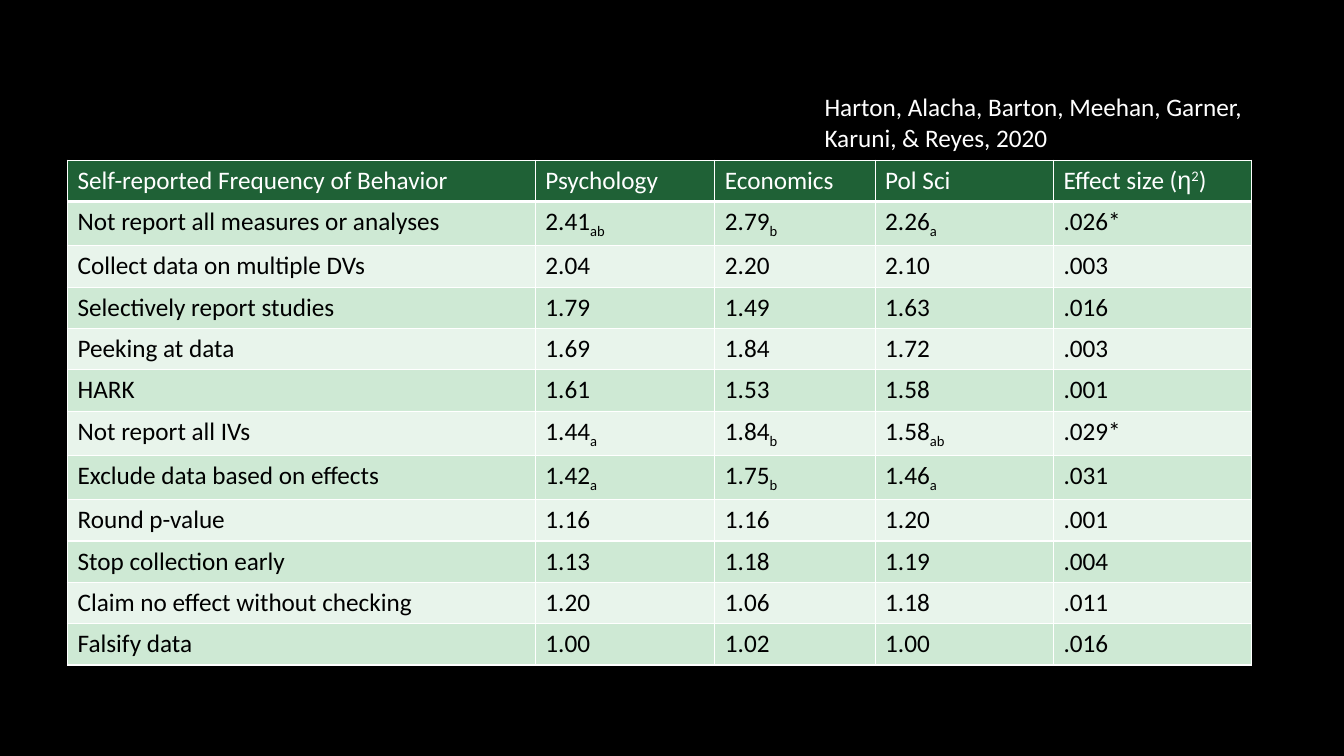
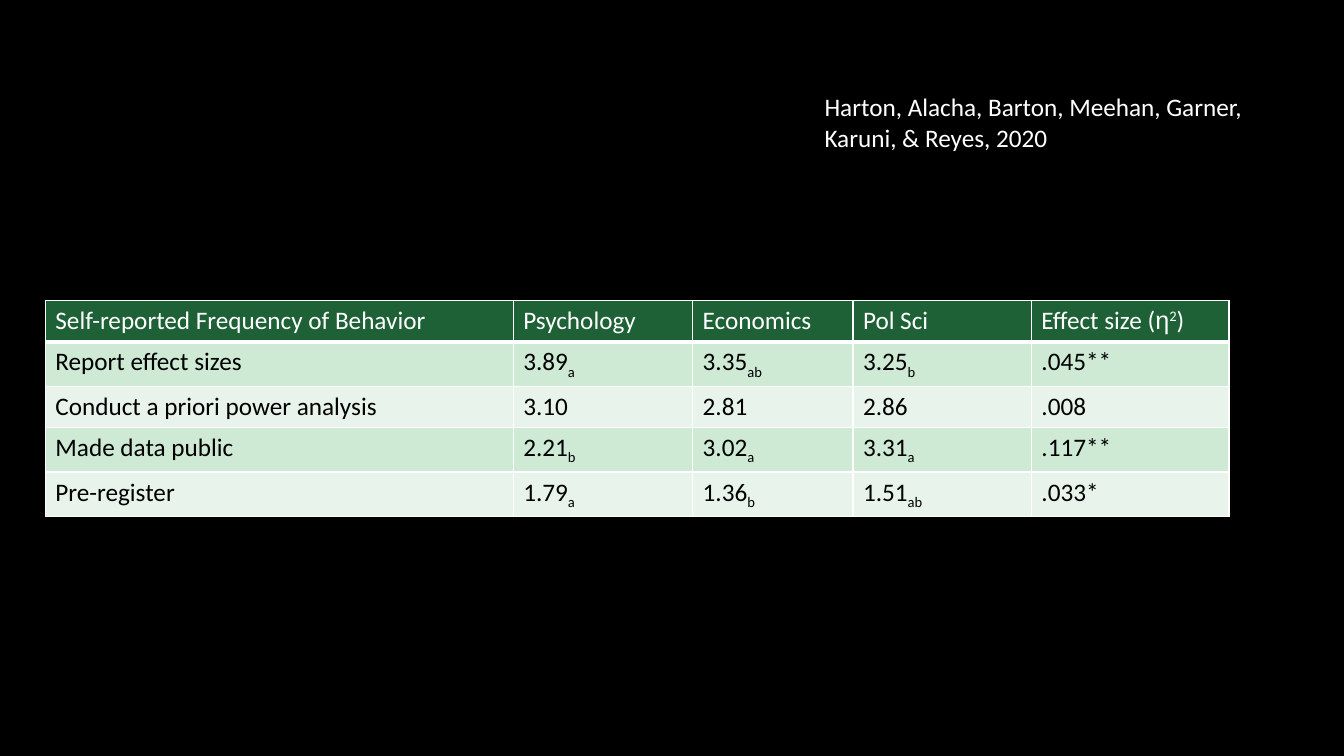
from dataclasses import dataclass

from lxml.etree import SubElement
from pptx import Presentation
from pptx.dml.color import RGBColor
from pptx.enum.text import MSO_AUTO_SIZE
from pptx.oxml.ns import qn
from pptx.util import Inches, Pt

WHITE, BLACK, GREEN = "FFFFFF", "000000", "1F6136"
BANDS = ("CEE9D4", "E8F4EB")
FONT = {"name": "Calibri", "size": Pt(18), "bold": False}
WIDTHS = (4.64, 1.78, 1.59, 1.77, 1.96)
ROW = 0.41
SOURCE = "Harton, Alacha, Barton, Meehan, Garner, Karuni, & Reyes, 2020"
HEAD = "Self-reported Frequency of Behavior|Psychology|Economics|Pol Sci|Effect size (η^2^)"


@dataclass
class Study:
    left: float
    top: float
    rows: tuple[str, ...]


# In a row, | parts the cells, _x_ lowers x and ^x^ raises it.
STUDIES = (
    Study(0.67, 1.59, (
        "Not report all measures or analyses|2.41_ab_|2.79_b_|2.26_a_|.026*",
        "Collect data on multiple DVs|2.04|2.20|2.10|.003",
        "Selectively report studies|1.79|1.49|1.63|.016",
        "Peeking at data|1.69|1.84|1.72|.003",
        "HARK|1.61|1.53|1.58|.001",
        "Not report all IVs|1.44_a_|1.84_b_|1.58_ab_|.029*",
        "Exclude data based on effects|1.42_a_|1.75_b_|1.46_a_|.031",
        "Round p-value|1.16|1.16|1.20|.001",
        "Stop collection early|1.13|1.18|1.19|.004",
        "Claim no effect without checking|1.20|1.06|1.18|.011",
        "Falsify data|1.00|1.02|1.00|.016",
    )),
    Study(0.45, 2.98, (
        "Report effect sizes|3.89_a_|3.35_ab_|3.25_b_|.045**",
        "Conduct a priori power analysis|3.10|2.81|2.86|.008",
        "Made data public|2.21_b_|3.02_a_|3.31_a_|.117**",
        "Pre-register|1.79_a_|1.36_b_|1.51_ab_|.033*",
    )),
)


def paint(fill, color: str) -> None:
    fill.solid()
    fill.fore_color.rgb = RGBColor.from_string(color)


def add_run(para, text: str, color: str, shift: int = 0, face: str = "Calibri") -> None:
    """Add a run, raised or lowered by shift percent."""
    run = para.add_run()
    run.text = text
    for key, value in (FONT | {"name": face}).items():
        setattr(run.font, key, value)
    paint(run.font.fill, color)
    if shift:
        run.font._element.set("baseline", str(shift * 1000))


def write(para, text: str, color: str) -> None:
    """Write text, turning its marks into raised and lowered runs."""
    mark, shift = ("^", 30) if "^" in text else ("_", -25)
    for i, part in enumerate(text.split(mark)):
        stem = part.removesuffix("η")
        if stem:
            add_run(para, stem, color, shift if i % 2 else 0)
        if stem != part:
            add_run(para, "η", color, face="Arial")


def add_edges(cell, base: int) -> None:
    """Draw white edges of one point, the lower one base points wide."""
    props = cell._tc.get_or_add_tcPr()
    for side, width in {"L": 1, "R": 1, "T": 1, "B": base}.items():
        line = SubElement(props, qn(f"a:ln{side}"), w=str(Pt(width)))
        fill = SubElement(line, qn("a:solidFill"))
        SubElement(fill, qn("a:srgbClr"), val=WHITE)


def add_grid(slide, study: Study) -> None:
    rows = (HEAD, *study.rows)
    grid = slide.shapes.add_table(
        len(rows), len(WIDTHS), Inches(study.left), Inches(study.top),
        Inches(sum(WIDTHS)), Inches(ROW * len(rows))).table
    for col, width in zip(grid.columns, WIDTHS):
        col.width = Inches(width)
    for r, row in enumerate(rows):
        grid.rows[r].height = Inches(ROW)
        ink, back, base = (BLACK, BANDS[(r - 1) % 2], 1) if r else (WHITE, GREEN, 3)
        for cell, text in zip(grid.rows[r].cells, row.split("|")):
            add_edges(cell, base)
            paint(cell.fill, back)
            write(cell.text_frame.paragraphs[0], text, ink)


def add_source(slide) -> None:
    box = slide.shapes.add_textbox(Inches(8.08), Inches(0.86), Inches(4.34), Inches(0.71))
    frame = box.text_frame
    frame.word_wrap = True
    frame.auto_size = MSO_AUTO_SIZE.SHAPE_TO_FIT_TEXT
    write(frame.paragraphs[0], SOURCE, WHITE)


def main() -> None:
    deck = Presentation()
    deck.slide_width, deck.slide_height = Inches(13.33), Inches(7.5)
    paint(deck.slide_master.background.fill, BLACK)
    for study in STUDIES:
        slide = deck.slides.add_slide(deck.slide_layouts[6])
        add_grid(slide, study)
        add_source(slide)
    deck.save("out.pptx")


if __name__ == "__main__":
    main()
